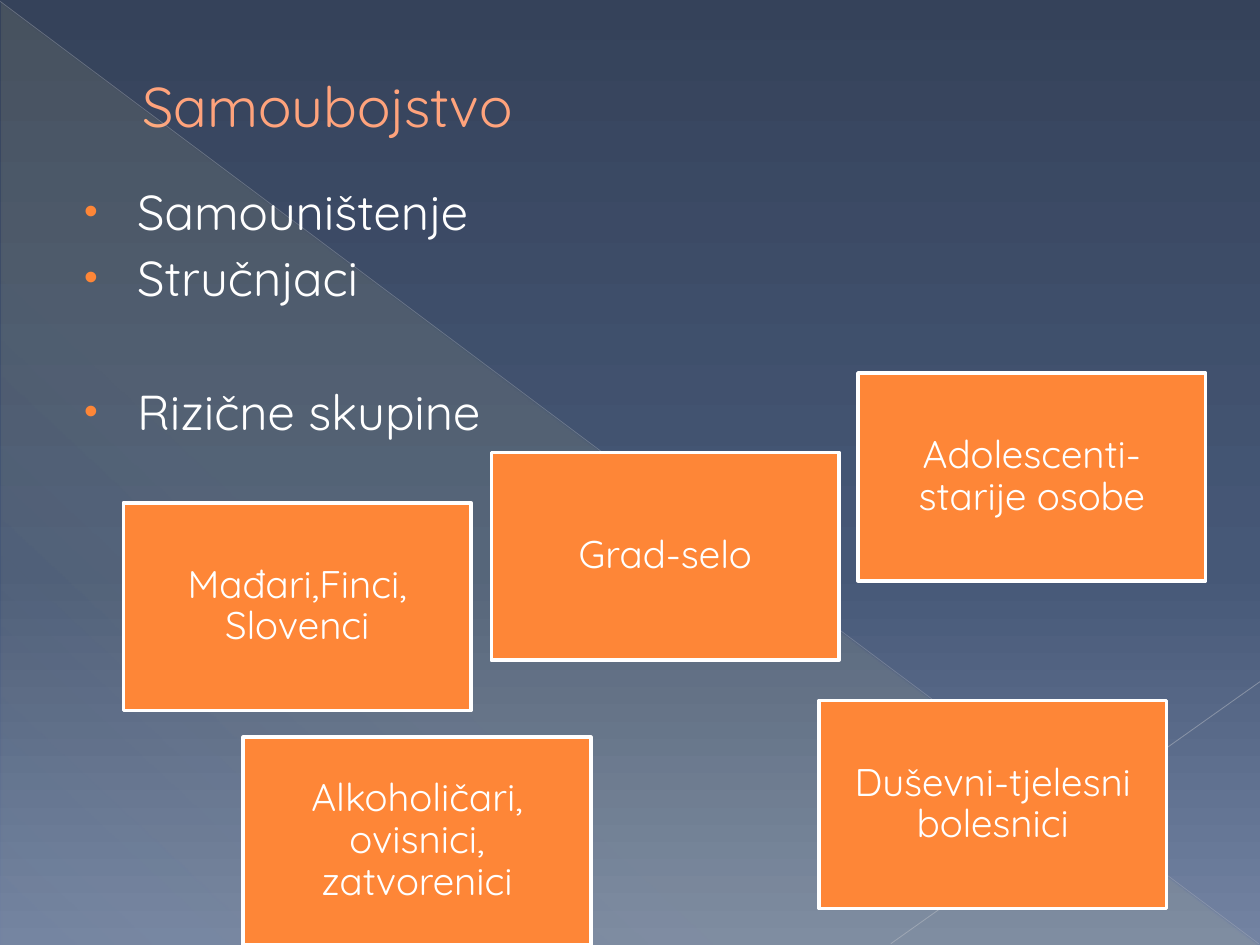
from lxml import etree
from pptx import Presentation
from pptx.dml.color import RGBColor
from pptx.enum.shapes import MSO_CONNECTOR, MSO_SHAPE
from pptx.enum.text import MSO_ANCHOR, PP_ALIGN
from pptx.oxml.ns import qn
from pptx.util import Pt

PX = 9144
LEFT, CENTER = PP_ALIGN.LEFT, PP_ALIGN.CENTER
TOP, MIDDLE = MSO_ANCHOR.TOP, MSO_ANCHOR.MIDDLE
RECT, TRIANGLE = MSO_SHAPE.RECTANGLE, MSO_SHAPE.RIGHT_TRIANGLE
STRAIGHT = MSO_CONNECTOR.STRAIGHT
ORANGE, WHITE = "FE8637", "FFFFFF"


def rgb(color):
    return RGBColor.from_string(color)


def write(tf, text, size=28, color=WHITE, align=LEFT, anchor=TOP,
          before=0, spacing=None, first=True):
    tf.word_wrap = True
    tf.vertical_anchor = anchor
    p = tf.paragraphs[0] if first else tf.add_paragraph()
    p.alignment = align
    p.space_before = Pt(before)
    p.line_spacing = spacing
    r = p.add_run()
    r.text = text
    r.font.name = "Quicksand"
    r.font.size = Pt(size)
    r.font.color.rgb = rgb(color)
    return p


prs = Presentation()
prs.slide_width, prs.slide_height = 1000 * PX, 750 * PX
slide = prs.slides.add_slide(prs.slide_layouts[5])
shapes = slide.shapes

sp = shapes.add_shape(TRIANGLE, 1 * PX, 2 * PX, 998 * PX, 748 * PX)
sp.shadow.inherit = False
sp.line.fill.background()

gradients = [
    (slide.background.fill, slide._element, 90,
     [(0, "35425A", 100), (60, "465877", 100), (100, "7383A2", 100)]),
    (sp.fill, sp._element, 133,
     [(0, "FFF39D", 10), (70, "FFF39D", 8), (100, "FFF39D", 1)]),
]
for fill, root, angle, stops in gradients:
    fill.gradient()
    grad = next(root.iter(qn("a:gradFill")))
    for child in list(grad):
        grad.remove(child)
    gs_list = etree.SubElement(grad, qn("a:gsLst"))
    for pos, color, alpha in stops:
        gs = etree.SubElement(gs_list, qn("a:gs"), pos=str(pos * 1000))
        clr = etree.SubElement(gs, qn("a:srgbClr"), val=color)
        etree.SubElement(clr, qn("a:alpha"), val=str(alpha * 1000))
    etree.SubElement(grad, qn("a:lin"), ang=str(angle * 60000), scaled="0")

for x1, y1, x2, y2, color, width, alpha in [
    (0, 1, 999, 749, "BABDC4", 0.39, 35),
    (1000, 541, 707, 749, "C1C4CA", 0.47, 45),
]:
    line = shapes.add_connector(STRAIGHT, x1 * PX, y1 * PX, x2 * PX, y2 * PX)
    line.line.color.rgb = rgb(color)
    line.line.width = Pt(width)
    clr = next(line._element.spPr.iter(qn("a:srgbClr")))
    etree.SubElement(clr, qn("a:alpha"), val=str(alpha * 1000))
    etree.SubElement(line._element.spPr, qn("a:effectLst"))

title = shapes.title
title.left, title.top = 50 * PX, 29 * PX
title.width, title.height = 702 * PX, 109 * PX
p = write(title.text_frame, "Samoubojstvo", size=32, color="FFA37C", anchor=MIDDLE)
p._p.get_or_add_pPr().set("marL", str(53 * PX))

tf = shapes.add_textbox(50 * PX, 139 * PX, 900 * PX, 567 * PX).text_frame
bullets = [("Samouništenje", 0), ("Stručnjaci", 4), ("Rizične skupine", 43)]
for i, (text, before) in enumerate(bullets):
    p = write(tf, text, before=before, first=i == 0)
    pPr = p._p.get_or_add_pPr()
    pPr.set("marL", str(49 * PX))
    pPr.set("indent", str(-42 * PX))
    bu_clr = etree.SubElement(pPr, qn("a:buClr"))
    etree.SubElement(bu_clr, qn("a:srgbClr"), val=ORANGE)
    etree.SubElement(pPr, qn("a:buSzPct"), val="80000")
    etree.SubElement(pPr, qn("a:buFont"), typeface="Arial")
    etree.SubElement(pPr, qn("a:buChar"), char="•")

for x, y, text in [
    (98, 399, "Mađari,Finci, Slovenci"),
    (390, 359, "Grad-selo"),
    (681, 296, "Adolescenti-starije osobe"),
    (193, 585, "Alkoholičari, ovisnici, zatvorenici"),
    (650, 556, "Duševni-tjelesni bolesnici"),
]:
    sp = shapes.add_shape(RECT, x * PX, y * PX, 276 * PX, 165 * PX)
    sp.shadow.inherit = False
    sp.fill.solid()
    sp.fill.fore_color.rgb = rgb(ORANGE)
    sp.line.color.rgb = rgb(WHITE)
    sp.line.width = Pt(2)
    tf = sp.text_frame
    tf.margin_left = tf.margin_right = tf.margin_top = tf.margin_bottom = 9 * PX
    write(tf, text, size=22, align=CENTER, anchor=MIDDLE, spacing=0.9)

prs.save("out.pptx")
